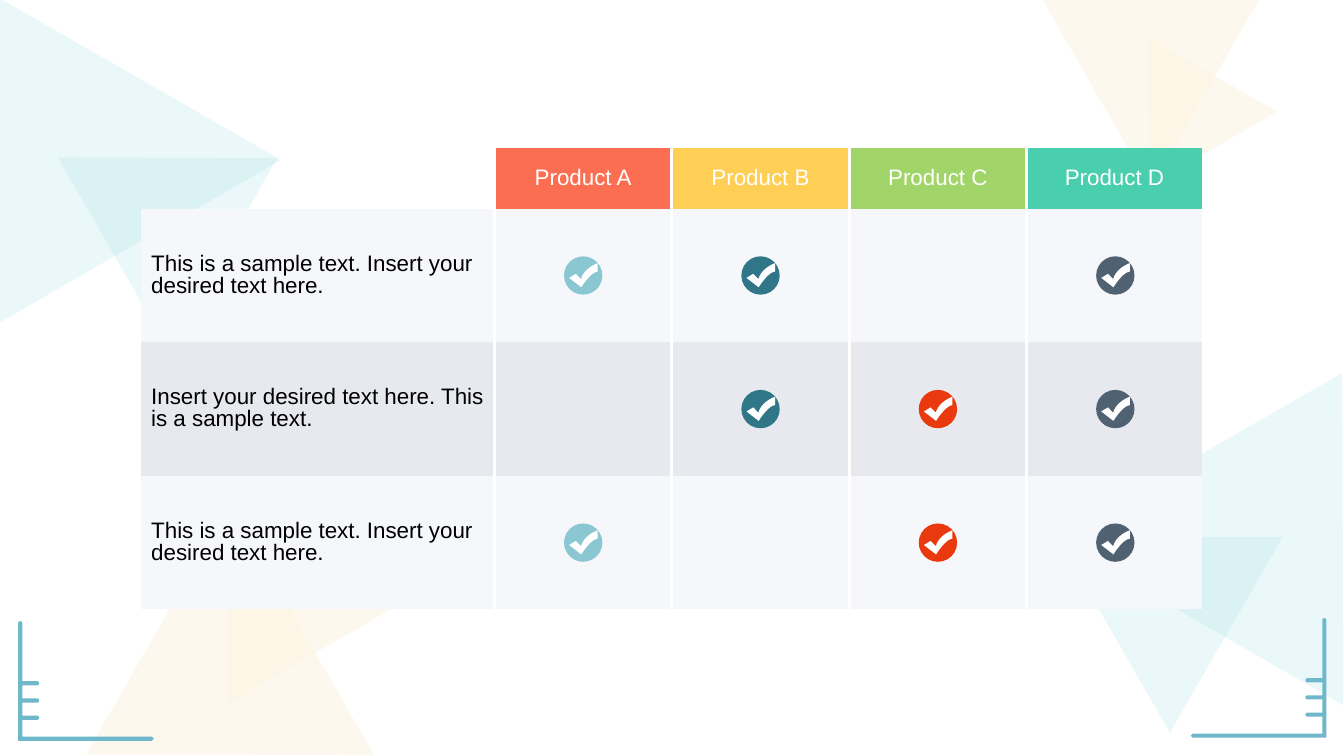
from dataclasses import dataclass
import math

from lxml import etree
from pptx import Presentation
from pptx import util as u
from pptx.dml.color import RGBColor
from pptx.enum import shapes, text
from pptx.oxml.ns import qn


@dataclass(frozen=True)
class Theme:
    font: str = "Arial"
    size: int = 16
    ink: str = "000000"
    white: str = "FFFFFF"
    teal: str = "85D8DE"
    cream: str = "FDF4E1"
    bracket: str = "6FB8CC"
    bands: tuple = ("F6F7FA", "E7E9EE")
    headers: tuple = ("FB6E52", "FFCE54", "A1D469", "49CFAE")
    checks: tuple = ("8AC7D3", "307689", "E93A0F", "506272")


PLAIN_TABLE = "{2D5ABB26-0587-4C30-8999-92F81FD0307C}"

# Comparison: products, and for each feature which products have it
PRODUCTS = ("Product A", "Product B", "Product C", "Product D")
FEATURES = (
    ("This is a sample text. Insert your desired text here.", (1, 1, 0, 1)),
    ("Insert your desired text here. This is a sample text.", (0, 1, 1, 1)),
    ("This is a sample text. Insert your desired text here.", (1, 0, 1, 1)),
)

# Grid, in points
LEFT, TOP = 100.8, 105.9
FEATURE_W, PRODUCT_W, GAP = 252.4, 126.7, 2.2
HEADER_H, ROW_H = 43.2, 95.4

# Background triangles: left, top, width, height, rotation
TEAL_TRIANGLES = (
    (-66.2, -14.4, 232.6, 200.2, 330),
    (60.5, 79.2, 157.7, 135.4, 60),
    (788.4, 252.7, 238.3, 205.2, 30),
    (735.1, 349.2, 161.3, 139, 300),
)
CREAM_TRIANGLES = (
    (35.3, 405.4, 206.6, 177.8, 240),
    (123.8, 355, 139.7, 120.2, 330),
    (725, -33.8, 155.5, 133.9, 300),
    (791.3, 47.5, 105.1, 90.7, 210),
)


def curve(start, bend1, bend2, end, steps=10):
    """Points along a cubic curve."""
    points = []
    for step in range(steps + 1):
        t = step / steps
        weights = ((1 - t) ** 3, 3 * t * (1 - t) ** 2, 3 * t * t * (1 - t), t ** 3)
        points.append(tuple(
            sum(w * p[axis] for w, p in zip(weights, (start, bend1, bend2, end)))
            for axis in (0, 1)))
    return points


def round_end(x, y, radius, first_angle):
    """Half circle that closes off a stroke."""
    angles = [math.radians(first_angle + 30 * i) for i in range(7)]
    return [(x + radius * math.cos(a), y + radius * math.sin(a)) for a in angles]


class SlideMaker:
    def __init__(self, slide, theme):
        self.slide, self.theme = slide, theme

    def paint(self, shape, color, alpha=None):
        shape.shadow.inherit = False
        shape.fill.solid()
        shape.fill.fore_color.rgb = RGBColor.from_string(color)
        shape.line.fill.background()
        if alpha:
            tint = shape.element.spPr.find(qn("a:solidFill"))[0]
            etree.SubElement(tint, qn("a:alpha"), val=str(alpha * 1000))

    def preset(self, kind, box, color, rotation=0, alpha=None):
        shape = self.slide.shapes.add_shape(kind, *map(u.Pt, box))
        shape.rotation = rotation
        self.paint(shape, color, alpha)

    def outline(self, points, color):
        start, *rest = [(u.Pt(x), u.Pt(y)) for x, y in points]
        builder = self.slide.shapes.build_freeform(*start)
        builder.add_line_segments(rest, close=True)
        self.paint(builder.convert_to_shape(), color)

    def corner_bracket(self, x, y, side):
        """Ruler-like corner; side is 1 to open right, -1 to open left."""
        r, foot, height, tick = 1.5, 97, 85.5, 15
        points = [(0, 0)]
        points += round_end(foot - r, -r, r, 90)[::-1][3:][::-1][:0]
        points += [(foot - r, 0), (foot, -r), (foot - r, -2 * r), (2 * r, -2 * r)]
        for rise in (16.5, 28.8, 41.1):
            points.append((2 * r, -rise + r))
            points += [(px, -py) for px, py in round_end(tick - r, rise, r, -90)]
            points.append((2 * r, -rise - r))
        points += [(px, -py) for px, py in round_end(r, height - r, r, 0)]
        self.outline([(x + side * px, y + py) for px, py in points], self.theme.bracket)

    def check(self, x, y, color):
        """Round badge with a tick, centred on x, y."""
        radius = 13.7
        self.preset(shapes.MSO_SHAPE.OVAL,
                    (x - radius, y - radius, 2 * radius, 2 * radius), color)
        tick = curve((10.4, -8.8), (10.4, -8.8), (0.6, -5.5), (-1.5, 2.6))
        tick += [(-5.2, -1.2), (-10, 1.7)]
        tick += curve((-1.3, 8.4), (-1.3, 8.4), (5.4, -2.6), (10.4, -2.8))
        self.outline([(x + px, y + py) for px, py in tick], self.theme.white)

    def cell(self, cell, words, color, fill, align, edges):
        cell.vertical_anchor = text.MSO_ANCHOR.MIDDLE
        for edge in edges:
            line = etree.SubElement(cell._tc.get_or_add_tcPr(), qn(f"a:{edge}"),
                                    w=str(u.Pt(GAP)))
            paint = etree.SubElement(line, qn("a:solidFill"))
            etree.SubElement(paint, qn("a:srgbClr"), val=self.theme.white)
        if fill:
            cell.fill.solid()
            cell.fill.fore_color.rgb = RGBColor.from_string(fill)
        else:
            cell.fill.background()
        if words:
            paragraph = cell.text_frame.paragraphs[0]
            run = paragraph.add_run()
            run.text = words
            run.font.color.rgb = RGBColor.from_string(color)
            formats = {paragraph: {"alignment": align, "line_spacing": 0.9},
                       run.font: {"name": self.theme.font,
                                  "size": u.Pt(self.theme.size)}}
            for target, values in formats.items():
                for name, value in values.items():
                    setattr(target, name, value)

    def comparison(self):
        theme, count = self.theme, len(PRODUCTS)
        widths = [FEATURE_W] + [PRODUCT_W] * (count - 1) + [PRODUCT_W - GAP / 2]
        heights = [HEADER_H] + [ROW_H] * len(FEATURES)
        frame = self.slide.shapes.add_table(
            len(heights), len(widths),
            *map(u.Pt, (LEFT, TOP, sum(widths), sum(heights))))
        table = frame.table
        table.first_row = table.horz_banding = False
        table._tbl.tblPr.find(qn("a:tableStyleId")).text = PLAIN_TABLE
        for column, width in zip(table.columns, widths):
            column.width = u.Pt(width)
        for row, height in zip(table.rows, heights):
            row.height = u.Pt(height)
        labels = [("",) + PRODUCTS]
        labels += [(feature,) + ("",) * count for feature, _ in FEATURES]
        for r, row in enumerate(labels):
            for c, words in enumerate(row):
                edges = ["lnL"] * (c > 0) + ["lnR"] * (c < count)
                if r == 0:
                    fill = theme.headers[c - 1] if c else None
                    style = (theme.white, fill, text.PP_ALIGN.CENTER)
                else:
                    style = (theme.ink, theme.bands[(r - 1) % 2], text.PP_ALIGN.LEFT)
                self.cell(table.cell(r, c), words, *style, edges)


def main():
    deck = Presentation()
    deck.slide_width, deck.slide_height = u.Pt(960), u.Pt(540)
    theme = Theme()
    maker = SlideMaker(deck.slides.add_slide(deck.slide_layouts[6]), theme)

    # Background
    for triangles, color, alpha in ((TEAL_TRIANGLES, theme.teal, 16),
                                    (CREAM_TRIANGLES, theme.cream, 60)):
        for *box, rotation in triangles:
            maker.preset(shapes.MSO_SHAPE.ISOSCELES_TRIANGLE, box, color, rotation, alpha)
    maker.corner_bracket(13, 529.2, 1)
    maker.corner_bracket(947.5, 527, -1)

    # Table and its check marks
    maker.comparison()
    first_x = LEFT + FEATURE_W + PRODUCT_W / 2
    first_y = TOP + HEADER_H + ROW_H / 2
    for r, (_, offered) in enumerate(FEATURES):
        for c, has_feature in enumerate(offered):
            if has_feature:
                maker.check(first_x + c * PRODUCT_W, first_y + r * ROW_H, theme.checks[c])

    deck.save("out.pptx")


if __name__ == "__main__":
    main()
